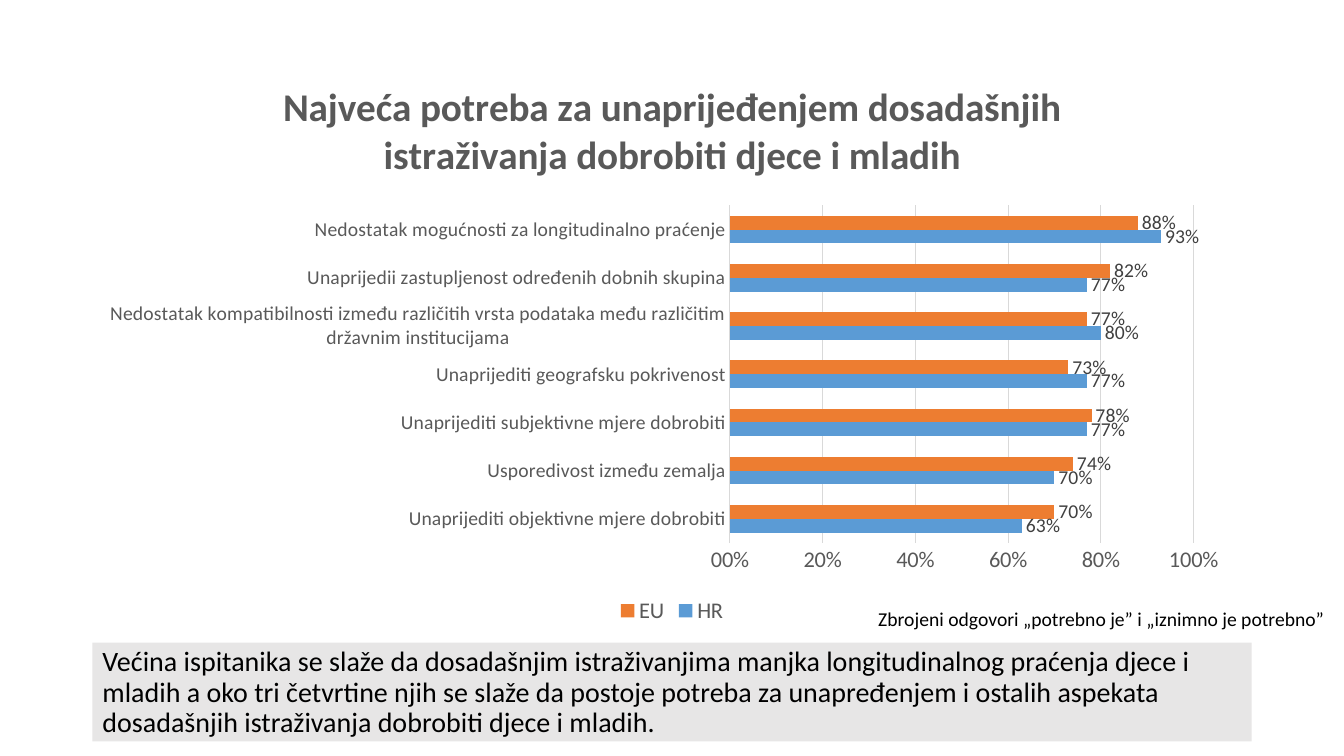
from lxml import etree
from pptx import Presentation
from pptx.chart.data import CategoryChartData
from pptx.dml.color import RGBColor
from pptx.enum.chart import XL_CHART_TYPE, XL_LABEL_POSITION, XL_LEGEND_POSITION, XL_TICK_MARK
from pptx.enum.text import MSO_ANCHOR, MSO_AUTO_SIZE, PP_ALIGN
from pptx.oxml.ns import qn
from pptx.util import Pt

PX = 9525
FONT = "Calibri"
PERCENT = "0,0%"
BLACK = RGBColor(0x00, 0x00, 0x00)
DARK_GRAY = RGBColor(0x40, 0x40, 0x40)
GRAY = RGBColor(0x59, 0x59, 0x59)
LIGHT_GRAY = RGBColor(0xD9, 0xD9, 0xD9)
PANEL_GRAY = RGBColor(0xE7, 0xE6, 0xE6)
BLUE = RGBColor(0x5B, 0x9B, 0xD5)
ORANGE = RGBColor(0xED, 0x7D, 0x31)

TITLE = "Najveća potreba za unaprijeđenjem dosadašnjih istraživanja dobrobiti djece i mladih"
SUMMARY = (
    "Većina ispitanika se slaže da dosadašnjim istraživanjima manjka longitudinalnog praćenja "
    "djece i mladih a oko tri četvrtine njih se slaže da postoje potreba za unapređenjem i "
    "ostalih aspekata dosadašnjih istraživanja dobrobiti djece i mladih."
)
NOTE = "Zbrojeni odgovori „potrebno je” i „iznimno je potrebno”"
NEEDS = [
    ("Unaprijediti objektivne mjere dobrobiti", 0.63, 0.70),
    ("Usporedivost između zemalja", 0.70, 0.74),
    ("Unaprijediti subjektivne mjere dobrobiti", 0.77, 0.78),
    ("Unaprijediti geografsku pokrivenost", 0.77, 0.73),
    ("Nedostatak kompatibilnosti između različitih vrsta podataka među različitim "
     "državnim institucijama", 0.80, 0.77),
    ("Unaprijedii zastupljenost određenih dobnih skupina", 0.77, 0.82),
    ("Nedostatak mogućnosti za longitudinalno praćenje", 0.93, 0.88),
]


def scale(box):
    return [length * PX for length in box]


def style_font(font, size, color, bold=False):
    font.name = FONT
    font.size = Pt(size)
    font.bold = bold
    font.color.rgb = color


def write_text(frame, text, size, color=BLACK, bold=False, align=PP_ALIGN.LEFT,
               line_spacing=None, space_before=0):
    paragraph = frame.paragraphs[0]
    paragraph.alignment = align
    paragraph.line_spacing = line_spacing
    paragraph.space_before = Pt(space_before)
    run = paragraph.add_run()
    run.text = text
    style_font(run.font, size, color, bold)
    return paragraph


def set_plot_layout(chart, **fractions):
    plot_area = chart.plots[0]._element.getparent()
    layout = plot_area.find(qn("c:layout"))
    if layout is None:
        layout = etree.Element(qn("c:layout"))
        plot_area.insert(0, layout)
    manual = etree.SubElement(layout, qn("c:manualLayout"))
    settings = {"layoutTarget": "inner", "xMode": "edge", "yMode": "edge", **fractions}
    for name, value in settings.items():
        etree.SubElement(manual, qn(f"c:{name}")).set("val", str(value))


def style_axes(chart):
    for axis, size in ((chart.category_axis, 14), (chart.value_axis, 16)):
        axis.major_tick_mark = XL_TICK_MARK.NONE
        axis.minor_tick_mark = XL_TICK_MARK.NONE
        style_font(axis.tick_labels.font, size, GRAY)
    category_line = chart.category_axis.format.line
    value_axis = chart.value_axis
    value_axis.has_major_gridlines = True
    for line in (category_line, value_axis.major_gridlines.format.line):
        line.color.rgb = LIGHT_GRAY
        line.width = Pt(0.75)
    value_axis.format.line.fill.background()
    value_axis.minimum_scale = 0
    value_axis.maximum_scale = 1
    value_axis.major_unit = 0.2
    value_axis.tick_labels.number_format = PERCENT
    value_axis.tick_labels.number_format_is_linked = False


def style_series(series, color):
    series.format.fill.solid()
    series.format.fill.fore_color.rgb = color
    series.invert_if_negative = False
    labels = series.data_labels
    labels.show_value = True
    labels.position = XL_LABEL_POSITION.OUTSIDE_END
    labels.number_format = PERCENT
    labels.number_format_is_linked = False
    style_font(labels.font, 14, DARK_GRAY)


def add_needs_chart(slide, box):
    names, croatia, europe = zip(*NEEDS)
    data = CategoryChartData(number_format=PERCENT)
    data.categories = names
    data.add_series("HR", croatia)
    data.add_series("EU", europe)
    chart = slide.shapes.add_chart(XL_CHART_TYPE.BAR_CLUSTERED, *scale(box), data).chart
    style_font(chart.font, 16, BLACK)
    chart.has_title = True
    write_text(chart.chart_title.text_frame, TITLE, 28, GRAY, bold=True, align=PP_ALIGN.CENTER)
    chart.chart_title.include_in_layout = False
    chart.has_legend = True
    chart.legend.position = XL_LEGEND_POSITION.BOTTOM
    chart.legend.include_in_layout = False
    style_font(chart.legend.font, 16, GRAY)
    plot = chart.plots[0]
    plot.gap_width = 150
    plot.overlap = 0
    plot.vary_by_categories = False
    for series, color in zip(plot.series, (BLUE, ORANGE)):
        style_series(series, color)
    style_axes(chart)
    set_plot_layout(chart, x=0.55, y=0.26, w=0.4, h=0.59)


def add_summary(slide, box):
    body = slide.placeholders[1]
    body.left, body.top, body.width, body.height = scale(box)
    body.fill.solid()
    body.fill.fore_color.rgb = PANEL_GRAY
    frame = body.text_frame
    frame.word_wrap = True
    frame.auto_size = MSO_AUTO_SIZE.NONE
    frame.vertical_anchor = MSO_ANCHOR.TOP
    paragraph = write_text(frame, SUMMARY, 20, line_spacing=0.9, space_before=10)
    properties = paragraph._p.get_or_add_pPr()
    properties.set("marL", "0")
    properties.set("indent", "0")
    etree.SubElement(properties, qn("a:buNone"))


def add_note(slide, box):
    frame = slide.shapes.add_textbox(*scale(box)).text_frame
    frame.word_wrap = True
    frame.auto_size = MSO_AUTO_SIZE.SHAPE_TO_FIT_TEXT
    write_text(frame, NOTE, 14)


def build_needs_slide(presentation):
    slide = presentation.slides.add_slide(presentation.slide_layouts[1])
    title = slide.shapes.title._element
    title.getparent().remove(title)
    add_summary(slide, (88, 612, 1104, 94))
    add_needs_chart(slide, (88, 54, 1104, 545))
    add_note(slide, (827, 573, 454, 32))


def main():
    presentation = Presentation()
    presentation.slide_width, presentation.slide_height = scale((1280, 720))
    build_needs_slide(presentation)
    presentation.save("out.pptx")


if __name__ == "__main__":
    main()
